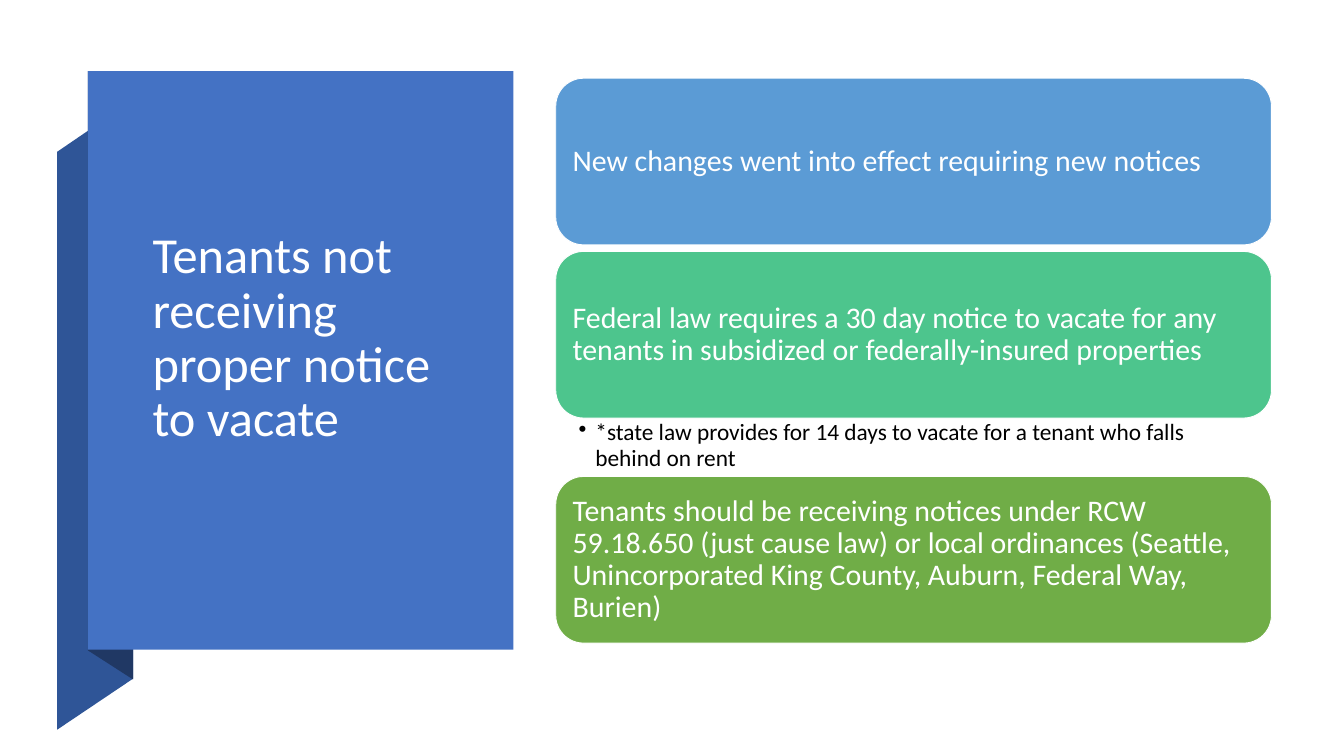
"""Build a slide on tenants who do not receive proper notice to vacate."""
from typing import NamedTuple

import lxml.etree
import pptx
import pptx.dml.color
import pptx.enum.shapes
import pptx.enum.text
import pptx.oxml.ns
import pptx.util

SLIDE_WIDTH = pptx.util.Inches(20)
SLIDE_HEIGHT = pptx.util.Inches(11.25)
FONT = "Calibri"
WHITE = "FFFFFF"
CARD_LEFT, CARD_WIDTH = 41.35, 53.25
CARD_HEIGHT, CARD_GAP, NOTE_HEIGHT = 22.04, 0.87, 7.73


class Box(NamedTuple):
    """A rectangle in percent of the slide's width and height."""

    left: float
    top: float
    width: float
    height: float


class Fold(NamedTuple):
    """A side of the ribbon, with its corners in percent of the slide."""

    colour: str
    corners: list[tuple[float, float]]


class Card(NamedTuple):
    """A coloured card with an optional note below it."""

    statement: str
    colour: str
    note: str = ""


FOLDS = [
    Fold("2F5597", [(4.25, 96.53), (9.9, 89.78), (9.9, 13.24), (4.25, 20.09)]),
    Fold("203864", [(6.55, 86.04), (9.9, 89.87), (9.9, 13.16), (6.55, 9.42)]),
]
PANEL = Box(6.55, 9.42, 31.65, 76.53)
TITLE = Box(10.85, 22.22, 22.55, 52.53)
CARDS = [
    Card("New changes went into effect requiring new notices", "5B9BD5"),
    Card(
        "Federal law requires a 30 day notice to vacate for any tenants in "
        "subsidized or federally-insured properties",
        "4DC58D",
        "*state law provides for 14 days to vacate for a tenant who falls behind on rent",
    ),
    Card(
        "Tenants should be receiving notices under RCW 59.18.650 (just cause law) "
        "or local ordinances (Seattle, Unincorporated King County, Auburn, "
        "Federal Way, Burien)",
        "70AD47",
    ),
]


def rgb(colour: str) -> pptx.dml.color.RGBColor:
    """Turn a hex string into a colour."""
    return pptx.dml.color.RGBColor.from_string(colour)


def across(percent: float) -> int:
    """Measure a share of the slide's width."""
    return round(SLIDE_WIDTH * percent / 100)


def down(percent: float) -> int:
    """Measure a share of the slide's height."""
    return round(SLIDE_HEIGHT * percent / 100)


def place(box: Box) -> tuple[int, int, int, int]:
    """Turn a box into left, top, width and height."""
    return across(box.left), down(box.top), across(box.width), down(box.height)


def paint(shape, colour: str, outline: str = "") -> None:
    """Fill a shape, with an outline only where one is named."""
    shape.shadow.inherit = False
    shape.fill.solid()
    shape.fill.fore_color.rgb = rgb(colour)
    if outline:
        shape.line.color.rgb = rgb(outline)
        shape.line.width = pptx.util.Pt(1)
    else:
        shape.line.fill.background()


def write(shape, wording: str, size: float, colour: str, insets: tuple[float, ...],
          anchor=pptx.enum.text.MSO_ANCHOR.MIDDLE):
    """Write one left-aligned paragraph, with insets in inches, and return it."""
    frame = shape.text_frame
    frame.word_wrap = True
    frame.auto_size = pptx.enum.text.MSO_AUTO_SIZE.NONE
    frame.vertical_anchor = anchor
    frame.margin_left, frame.margin_top, frame.margin_right, frame.margin_bottom = map(
        pptx.util.Inches, insets
    )
    paragraph = frame.paragraphs[0]
    paragraph.alignment = pptx.enum.text.PP_ALIGN.LEFT
    paragraph.line_spacing = 0.9
    run = paragraph.add_run()
    run.text = wording
    run.font.name = FONT
    run.font.size = pptx.util.Pt(size)
    run.font.color.rgb = rgb(colour)
    return paragraph


def draw_ribbon(slide) -> None:
    """Draw the folded ribbon and its front panel."""
    for fold in FOLDS:
        start, *others = [(across(x), down(y)) for x, y in fold.corners]
        outline = slide.shapes.build_freeform(*start, scale=1.0)
        outline.add_line_segments(others, close=True)
        paint(outline.convert_to_shape(), fold.colour)
    panel = slide.shapes.add_shape(pptx.enum.shapes.MSO_SHAPE.RECTANGLE, *place(PANEL))
    paint(panel, "4472C4")


def draw_title(slide) -> None:
    """Set the title in front of the panel, raised by one line."""
    title = slide.shapes.title
    title.left, title.top, title.width, title.height = place(TITLE)
    write(title, "Tenants not receiving proper notice to vacate", 54, WHITE,
          (0.1, 0.05, 0.1, 0.87))
    slide.shapes._spTree.append(title._element)


def draw_note(slide, wording: str, top: float) -> None:
    """Write a bulleted note under a card."""
    note = slide.shapes.add_textbox(*place(Box(CARD_LEFT, top, CARD_WIDTH, NOTE_HEIGHT)))
    paragraph = write(note, wording, 25, "000000", (0.34, 0.04, 0.25, 0.04),
                      pptx.enum.text.MSO_ANCHOR.TOP)
    paragraph.level = 1
    properties = paragraph._p.get_or_add_pPr()
    indent = pptx.util.Inches(0.25)
    properties.set("marL", str(indent))
    properties.set("indent", str(-indent))
    bullet = lxml.etree.SubElement(properties, pptx.oxml.ns.qn("a:buChar"))
    bullet.set("char", "•")


def draw_cards(slide, top: float) -> None:
    """Stack the cards downwards, each followed by its note or a gap."""
    for card in CARDS:
        box = Box(CARD_LEFT, top, CARD_WIDTH, CARD_HEIGHT)
        shape = slide.shapes.add_shape(
            pptx.enum.shapes.MSO_SHAPE.ROUNDED_RECTANGLE, *place(box)
        )
        paint(shape, card.colour, WHITE)
        write(shape, card.statement, 32, WHITE, (0.13,) * 4)
        top += CARD_HEIGHT
        if card.note:
            draw_note(slide, card.note, top)
        top += NOTE_HEIGHT if card.note else CARD_GAP


def main() -> None:
    """Build and save the slide."""
    deck = pptx.Presentation()
    deck.slide_width, deck.slide_height = SLIDE_WIDTH, SLIDE_HEIGHT
    slide = deck.slides.add_slide(deck.slide_layouts.get_by_name("Title Only"))
    draw_ribbon(slide)
    draw_title(slide)
    draw_cards(slide, top=10.35)
    deck.save("out.pptx")


if __name__ == "__main__":
    main()
